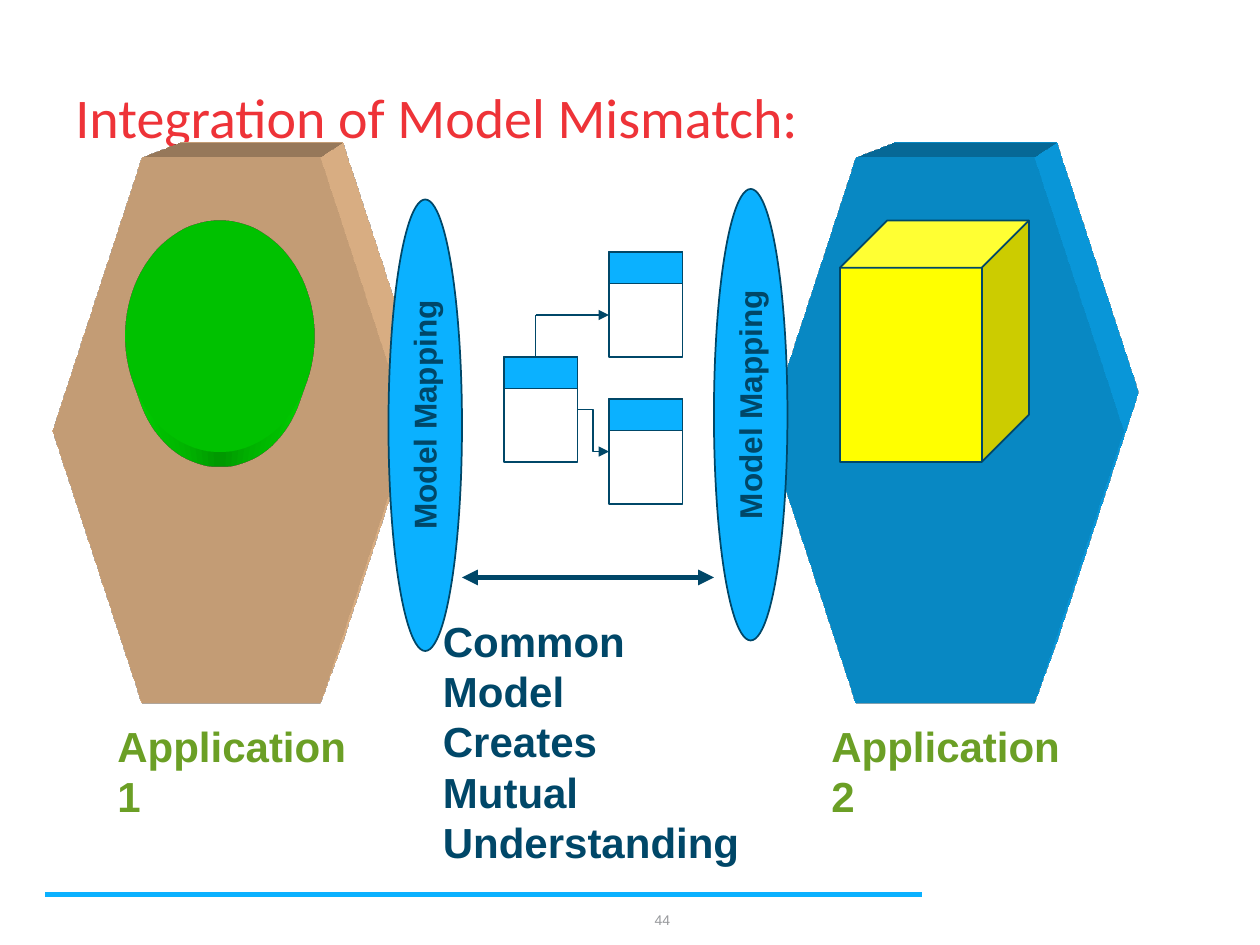
from lxml.etree import SubElement
from pptx import Presentation
from pptx.dml.color import RGBColor
from pptx.enum.shapes import MSO_CONNECTOR, MSO_SHAPE
from pptx.enum.text import MSO_ANCHOR, PP_ALIGN
from pptx.oxml.ns import qn
from pptx.util import Pt

NAVY, SKY, GREEN = "004768", "0BB1FF", "6B9F25"


def rgb(value):
    return RGBColor.from_string(value)


def add_shape(shapes, kind, box, fill, line=None):
    sp = shapes.add_shape(kind, *map(Pt, box))
    sp.shadow.inherit = False
    sp.fill.solid()
    sp.fill.fore_color.rgb = rgb(fill)
    if line:
        sp.line.color.rgb = rgb(line)
        sp.line.width = Pt(1)
    else:
        sp.line.fill.background()
    return sp


def extrude(sp, camera, color):
    spPr = sp._element.spPr
    scene = SubElement(spPr, qn("a:scene3d"))
    SubElement(scene, qn("a:camera"), prst=camera)
    SubElement(scene, qn("a:lightRig"), rig="legacyFlat3", dir="b")
    sp3d = SubElement(spPr, qn("a:sp3d"), extrusionH="887400", prstMaterial="legacyMatte")
    for bevel in ("a:bevelT", "a:bevelB"):
        SubElement(sp3d, qn(bevel), w="13500", h="13500", prst="angle")
    clr = SubElement(sp3d, qn("a:extrusionClr"))
    SubElement(clr, qn("a:srgbClr"), val=color)


def add_text(s, box, lines, size, color, font="Arial", bold=False, wrap=True,
             anchor=MSO_ANCHOR.TOP, align=PP_ALIGN.LEFT, spacing=1.0):
    sp = s.shapes.add_textbox(*map(Pt, box))
    tf = sp.text_frame
    tf.word_wrap = wrap
    tf.vertical_anchor = anchor
    tf.text = "\n".join(lines)
    for p in tf.paragraphs:
        p.alignment = align
        p.line_spacing = spacing
        for r in p.runs:
            r.font.name = font
            r.font.size = Pt(size)
            r.font.bold = bold
            r.font.color.rgb = rgb(color)
    return sp


def add_line(s, start, end, color=NAVY, width=1, ends=(), kind=MSO_CONNECTOR.STRAIGHT):
    cn = s.shapes.add_connector(kind, *map(Pt, start + end))
    cn.line.color.rgb = rgb(color)
    cn.line.width = Pt(width)
    ln = cn.line._get_or_add_ln()
    for tag in ends:
        SubElement(ln, qn(tag), type="triangle")
    SubElement(cn._element.spPr, qn("a:effectLst"))


def add_application(s, x, color):
    sp = add_shape(s.shapes, MSO_SHAPE.HEXAGON, (x, 90, 204, 312), color)
    extrude(sp, "legacyPerspectiveTopRight", color)


def add_entity(s, x, y):
    group = s.shapes.add_group_shape()
    for height, fill in ((60, "FFFFFF"), (18, SKY)):
        add_shape(group.shapes, MSO_SHAPE.RECTANGLE, (x, y, 42, height), fill, NAVY)


def add_mapping(s, x, y):
    add_shape(s.shapes, MSO_SHAPE.OVAL, (x, y, 42, 258), SKY, NAVY)
    label = add_text(s, (x - 52.2, y + 108.5, 145.4, 29), ["Model Mapping"], 18, NAVY,
                     bold=True, wrap=False)
    label.rotation = 270


def main():
    prs = Presentation()
    prs.slide_width, prs.slide_height = Pt(720), Pt(540)
    s = prs.slides.add_slide(prs.slide_layouts[6])

    add_line(s, (26, 511), (527, 511), SKY, 3)
    add_text(s, (228, 511, 162, 29), ["44"], 8, "96989B",
             anchor=MSO_ANCHOR.MIDDLE, align=PP_ALIGN.RIGHT)
    add_text(s, (36, 24, 654, 90), ["Integration of Model Mismatch:"], 32, "EE3338",
             font="Calibri", anchor=MSO_ANCHOR.MIDDLE, spacing=0.9)

    add_application(s, 438, SKY)
    add_shape(s.shapes, MSO_SHAPE.CUBE, (480, 126, 108, 138), "FFFF00", NAVY)
    add_application(s, 30, "FFCC99")
    oval = add_shape(s.shapes, MSO_SHAPE.OVAL, (72, 126, 108, 132), "00FF00")
    extrude(oval, "legacyPerspectiveBottom", "00FF00")
    for x, name in ((60, "Application 1"), (468, "Application 2")):
        add_text(s, (x, 408, 152, 36), [name], 24, GREEN, bold=True)

    for x, y in ((288, 204), (348, 144), (348, 228)):
        add_entity(s, x, y)
    add_line(s, (306, 204), (306, 180))
    add_line(s, (306, 180), (348, 180), ends=("a:tailEnd",))
    add_line(s, (330, 234), (348, 258), ends=("a:tailEnd",), kind=MSO_CONNECTOR.ELBOW)

    add_mapping(s, 222, 114)
    add_mapping(s, 408, 108)
    add_line(s, (264, 330), (408, 330), width=3, ends=("a:headEnd", "a:tailEnd"))
    add_text(s, (246, 348, 184, 94), ["Common Model", "Creates Mutual", "Understanding"],
             24, NAVY, bold=True)

    prs.save("out.pptx")


if __name__ == "__main__":
    main()
